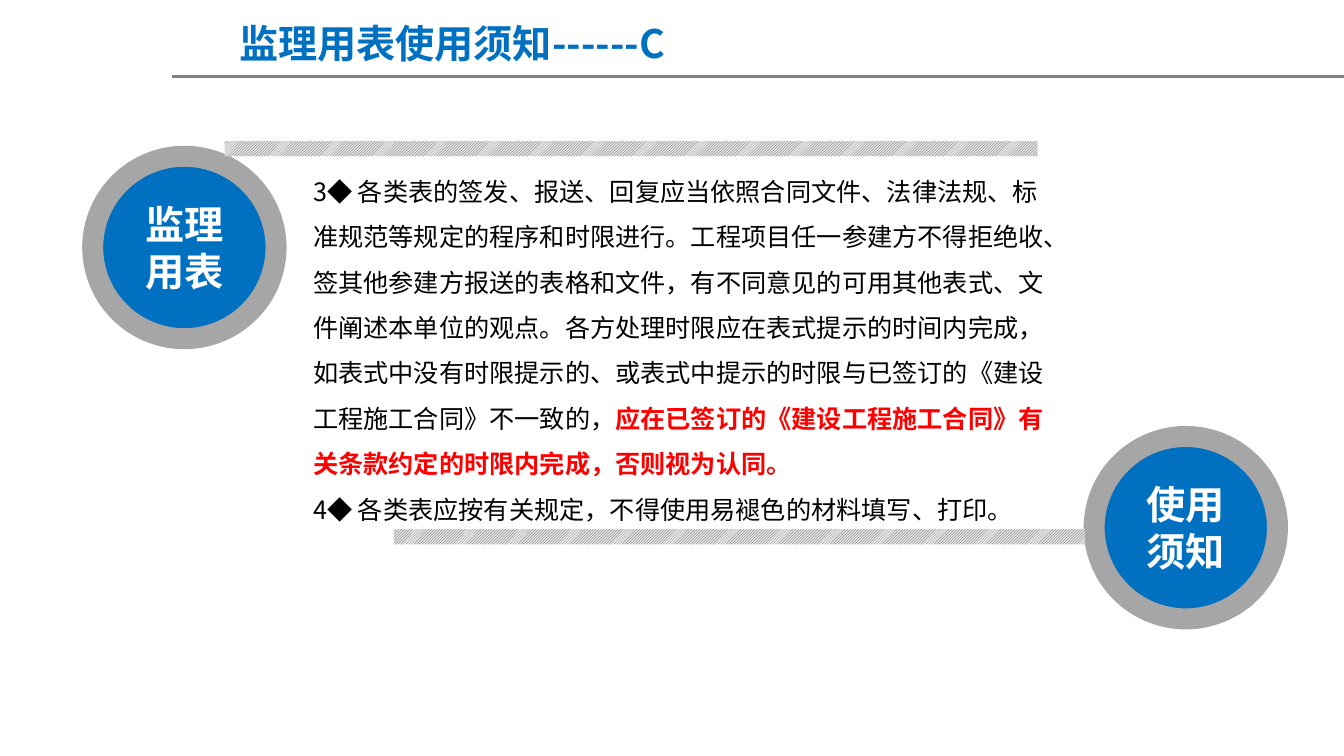
import pptx
import pptx.util
import pptx.dml.color
import pptx.enum.dml
import pptx.enum.shapes
import pptx.enum.text
import pptx.oxml
import pptx.oxml.ns

RGB = pptx.dml.color.RGBColor
BLUE = RGB(0x00, 0x70, 0xC0)
GREY = RGB(0x80, 0x80, 0x80)
RING = RGB(0xA6, 0xA6, 0xA6)
WHITE = RGB(0xFF, 0xFF, 0xFF)
BLACK = RGB(0x00, 0x00, 0x00)
RED = RGB(0xFF, 0x00, 0x00)
INK = RGB(0x41, 0x44, 0x55)
PALE = RGB(0xE8, 0xE8, 0xE6)
FONT = "Noto Sans CJK SC"
PX = 9144  # 100 px to the inch
Pt = pptx.util.Pt
KINDS = pptx.enum.shapes.MSO_SHAPE
CENTER = pptx.enum.text.PP_ALIGN.CENTER


def px(*nums):
    return [n * PX for n in nums]


def style(run, size, color, bold):
    run.font.size = Pt(size)
    run.font.bold = bold
    run.font.color.rgb = color
    run.font.name = FONT
    # East Asian text takes its own font element
    east = pptx.oxml.parse_xml(
        f'<a:ea {pptx.oxml.ns.nsdecls("a")} typeface="{FONT}"/>')
    run._r.get_or_add_rPr().find(pptx.oxml.ns.qn("a:latin")).addnext(east)


deck = pptx.Presentation()
deck.slide_width, deck.slide_height = px(1334, 750)
slide = deck.slides.add_slide(deck.slide_layouts[6])
shapes = slide.shapes

# Rule under the title
rule = shapes.add_connector(
    pptx.enum.shapes.MSO_CONNECTOR.STRAIGHT, *px(171, 76, 1334, 76))
rule.line.color.rgb = GREY
rule.line.width = Pt(2)
rule._element.spPr.append(
    pptx.oxml.parse_xml(f'<a:effectLst {pptx.oxml.ns.nsdecls("a")}/>'))

# Title
title = shapes.add_textbox(*px(189, 19, 519, 57)).text_frame
title.word_wrap = True
title.margin_left = title.margin_right = 0
title.margin_top = title.margin_bottom = 0
title.text = "监理用表使用须知------C"
title.paragraphs[0].alignment = CENTER
style(title.paragraphs[0].runs[0], 28, BLUE, True)

# Body text
notes = [
    [("3◆ 各类表的签发、报送、回复应当依照合同文件、法律法规、标准规范等规定的程序和时限进行。"
      "工程项目任一参建方不得拒绝收、签其他参建方报送的表格和文件，有不同意见的可用其他表式、"
      "文件阐述本单位的观点。各方处理时限应在表式提示的时间内完成，如表式中没有时限提示的、"
      "或表式中提示的时限与已签订的《建设工程施工合同》不一致的，", BLACK, False),
     ("应在已签订的《建设工程施工合同》有关条款约定的时限内完成，否则视为认同。", RED, True)],
    [("4◆ 各类表应按有关规定，不得使用易褪色的材料填写、打印。", BLACK, False)],
]
body = shapes.add_textbox(*px(301, 155, 758, 374)).text_frame
body.word_wrap = True
for i, parts in enumerate(notes):
    para = body.add_paragraph() if i else body.paragraphs[0]
    para.line_spacing = 1.5
    for words, color, bold in parts:
        run = para.add_run()
        run.text = words
        style(run, 18, color, bold)

# Each badge with its hatched bar: the first bar lies over its badge
for label, left, top, bar in [
    ("监理用表", 92, 155, (223, 140, 807, 15)),
    ("使用须知", 1086, 433, (391, 525, 686, 15)),
]:
    badge = shapes.add_shape(KINDS.OVAL, *px(left, top, 182, 181))
    badge.shadow.inherit = False
    badge.fill.solid()
    badge.fill.fore_color.rgb = BLUE
    badge.line.color.rgb = RING
    badge.line.width = Pt(15)
    frame = badge.text_frame
    frame.word_wrap = True
    frame.vertical_anchor = pptx.enum.text.MSO_ANCHOR.MIDDLE
    frame.text = label
    frame.paragraphs[0].alignment = CENTER
    style(frame.paragraphs[0].runs[0], 28, WHITE, True)

    strip = shapes.add_shape(KINDS.RECTANGLE, *px(*bar))
    strip.shadow.inherit = False
    strip.fill.patterned()
    strip.fill.pattern = pptx.enum.dml.MSO_PATTERN.LIGHT_UPWARD_DIAGONAL
    strip.fill.fore_color.rgb = INK
    strip.fill.back_color.rgb = PALE
    strip.line.fill.background()

deck.save("out.pptx")
